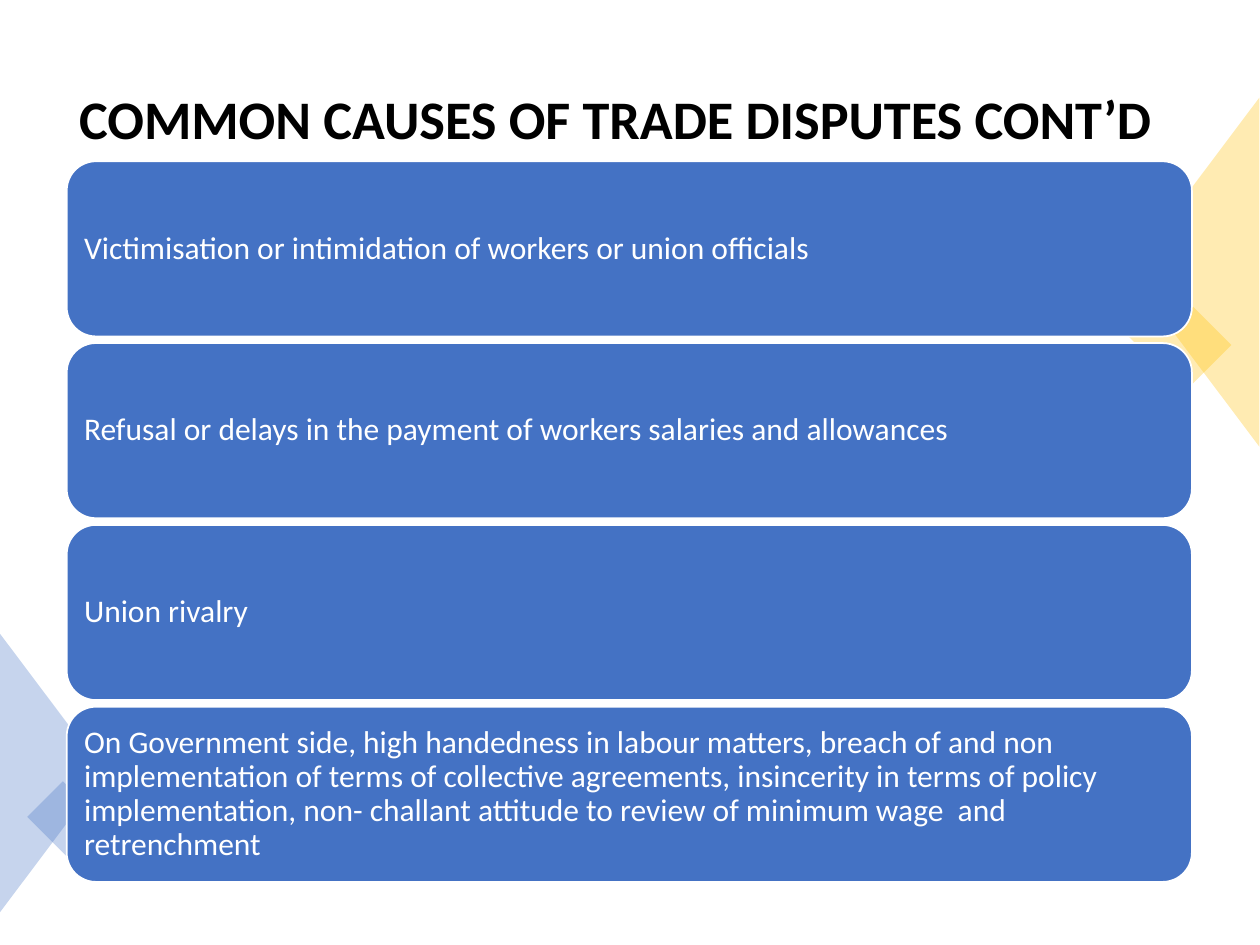
"""Build a slide listing common causes of trade disputes as stacked cards."""
import pptx
import pptx.util
import pptx.dml.color
import pptx.enum.shapes
import pptx.enum.text
import pptx.oxml
import pptx.oxml.ns

SHAPE = pptx.enum.shapes.MSO_SHAPE
TITLE = "COMMON CAUSES OF TRADE DISPUTES CONT’D"
CAUSES = [
    "Victimisation or intimidation of workers or union officials",
    "Refusal or delays in the payment of workers salaries and allowances",
    "Union rivalry",
    "On Government side, high handedness in labour matters, breach of and non "
    "implementation of terms of collective agreements, insincerity in terms of policy "
    "implementation, non- challant attitude to review of minimum wage  and retrenchment",
]
THEME = {
    "font": "Calibri", "title_size": 31, "body_size": 18,
    "black": "000000", "white": "FFFFFF", "blue": "4472C4", "gold": "FFC000",
    "decor_alpha": 30,
}
DECOR = [
    (SHAPE.RECTANGLE, (8.98, 2.41, 0.71, 0.53), 45, "gold"),
    (SHAPE.ISOSCELES_TRIANGLE, (8.09, 1.64, 2.77, 1.04), 270, "gold"),
    (SHAPE.ISOSCELES_TRIANGLE, (-0.69, 5.72, 2.21, 0.83), 90, "blue"),
    (SHAPE.RECTANGLE, (0.28, 6.33, 0.53, 0.4), 45, "blue"),
]
WIDTH, HEIGHT = 10, 7.5
LEFT, CARD_W = 0.53, 8.93
CARD_TOP, CARD_H, CARD_STEP = 1.28, 1.39, 1.443


def inches(*values):
    return [pptx.util.Inches(v) for v in values]


def color(name):
    return pptx.dml.color.RGBColor.from_string(THEME[name])


def add_shape(s, kind, box, fill, rotation=0, alpha=None, line=None):
    sp = s.shapes.add_shape(kind, *inches(*box))
    sp.shadow.inherit = False
    sp.rotation = rotation
    sp.fill.solid()
    sp.fill.fore_color.rgb = color(fill)
    if alpha is not None:
        clr = sp.fill._xPr.find(".//" + pptx.oxml.ns.qn("a:srgbClr"))
        node = pptx.oxml.parse_xml(
            f'<a:alpha {pptx.oxml.ns.nsdecls("a")} val="{alpha * 1000}"/>')
        clr.append(node)
    if line:
        sp.line.color.rgb = color(line)
        sp.line.width = pptx.util.Pt(1)
    else:
        sp.line.fill.background()
    return sp


def write(sp, text, *, size, fill, bold=False, inset=(0.1, 0.05)):
    tf = sp.text_frame
    tf.word_wrap = True
    tf.vertical_anchor = pptx.enum.text.MSO_ANCHOR.MIDDLE
    tf.margin_left = tf.margin_right = pptx.util.Inches(inset[0])
    tf.margin_top = tf.margin_bottom = pptx.util.Inches(inset[1])
    p = tf.paragraphs[0]
    p.alignment = pptx.enum.text.PP_ALIGN.LEFT
    p.line_spacing = 0.9
    r = p.add_run()
    r.text = text
    r.font.name = THEME["font"]
    r.font.size = pptx.util.Pt(THEME[size])
    r.font.bold = bold
    r.font.color.rgb = color(fill)


def main():
    prs = pptx.Presentation()
    prs.slide_width, prs.slide_height = inches(WIDTH, HEIGHT)
    s = prs.slides.add_slide(prs.slide_layouts[6])
    s.background.fill.solid()
    s.background.fill.fore_color.rgb = color("white")

    title = s.shapes.add_textbox(*inches(LEFT, 0.35, CARD_W, 1.24))
    write(title, TITLE, size="title_size", fill="black", bold=True)
    for kind, box, rotation, fill in DECOR:
        add_shape(s, kind, box, fill, rotation, THEME["decor_alpha"])
    for row, cause in enumerate(CAUSES):
        box = (LEFT, CARD_TOP + row * CARD_STEP, CARD_W, CARD_H)
        card = add_shape(s, SHAPE.ROUNDED_RECTANGLE, box, "blue", line="white")
        write(card, cause, size="body_size", fill="white", inset=(0.07, 0.07))
    prs.save("out.pptx")


if __name__ == "__main__":
    main()
